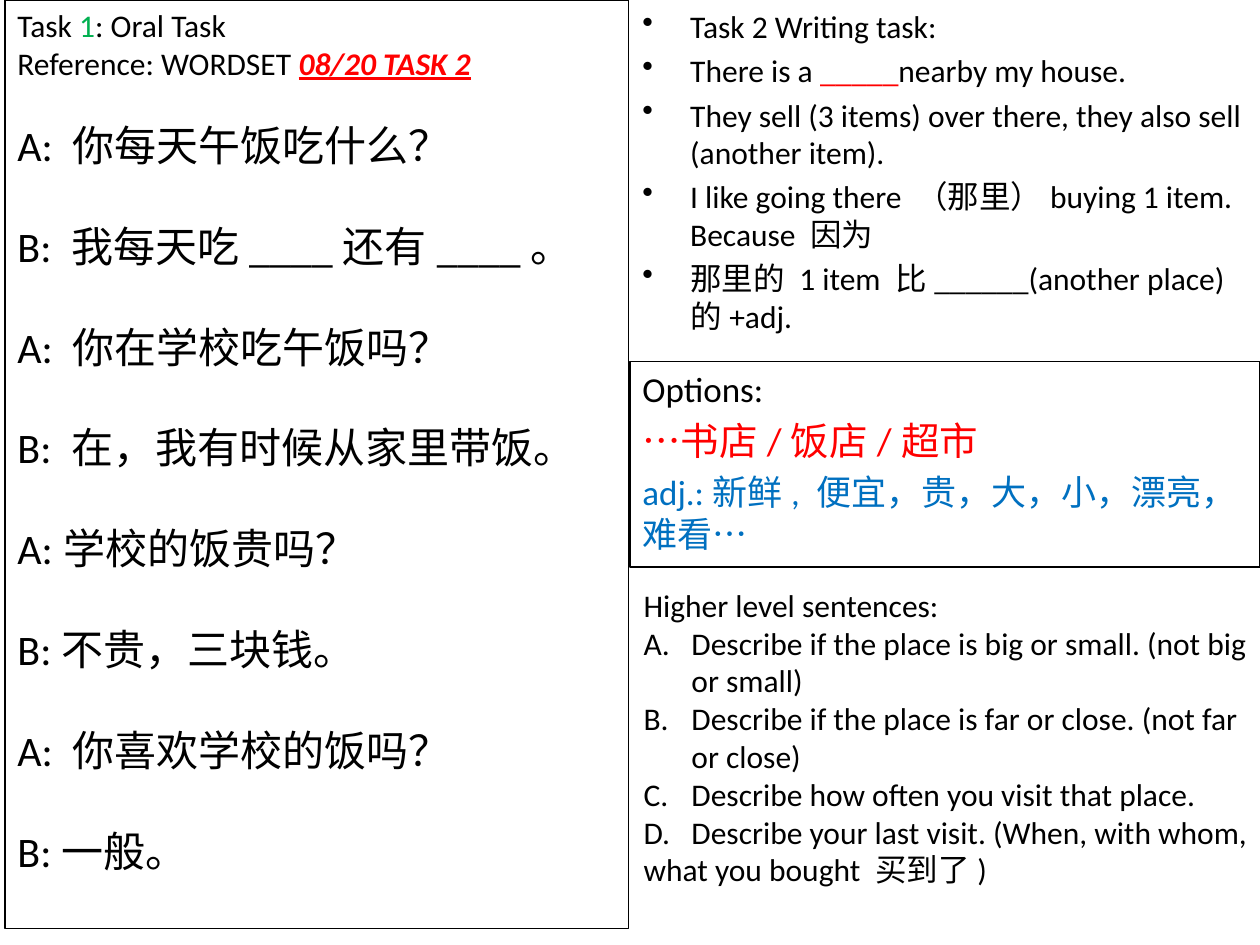
from lxml import etree
from pptx import Presentation
from pptx import util as u
from pptx.dml.color import RGBColor
from pptx.enum import shapes, text
from pptx.oxml import ns

BLACK, RED, GREEN, BLUE = "000000", "FF0000", "00B050", "0070C0"
HANGING = 0.38


def color(value):
    """Turn a hex string into a colour."""
    return RGBColor.from_string(value)


class Worksheet:
    """Holds the text style and the current slide."""

    font = "Calibri"

    def __init__(self, slide):
        self.slide = slide

    def panel(self, left, top, width, height):
        """Add an outlined rectangle and return its text frame."""
        shape = self.slide.shapes.add_shape(
            shapes.MSO_SHAPE.RECTANGLE, *map(u.Inches, (left, top, width, height)))
        shape.shadow.inherit = False
        shape.fill.background()
        shape.line.color.rgb = color(BLACK)
        shape.line.width = u.Pt(0.75)
        return self.prepare(shape)

    def text_box(self, left, top, width, height):
        """Add a plain text box and return its text frame."""
        return self.prepare(self.slide.shapes.add_textbox(
            *map(u.Inches, (left, top, width, height))))

    def prepare(self, shape):
        """Make a text frame wrap and start at the top."""
        frame = shape.text_frame
        frame.word_wrap = True
        frame.vertical_anchor = text.MSO_ANCHOR.TOP
        return frame

    def paragraph(self, frame, parts, size=18, before=0, ink=BLACK):
        """Add a paragraph of plain strings or (string, colour, emphasis) parts."""
        first = frame.paragraphs[0]
        paragraph = frame.add_paragraph() if first.runs else first
        paragraph.alignment = text.PP_ALIGN.LEFT
        paragraph.space_before = u.Pt(before)
        for part in [parts] if isinstance(parts, str) else parts:
            wording, tint, emphasis = (part, ink, False) if isinstance(part, str) else part
            run = paragraph.add_run()
            run.text = wording
            run.font.name = self.font
            run.font.size = u.Pt(size)
            run.font.color.rgb = color(tint)
            if emphasis:
                run.font.bold = run.font.italic = run.font.underline = True
        return paragraph

    def list_item(self, frame, parts, tag, before=0, **marker):
        """Add a paragraph with a hanging bullet or number."""
        properties = self.paragraph(frame, parts, before=before)._p.get_or_add_pPr()
        properties.set("marL", str(u.Inches(HANGING)))
        properties.set("indent", str(-u.Inches(HANGING)))
        etree.SubElement(properties, ns.qn(tag), **marker)

    def tabbed_item(self, frame, wording):
        """Add a typed letter followed by a tab."""
        properties = self.paragraph(frame, wording)._p.get_or_add_pPr()
        tabs = etree.SubElement(properties, ns.qn("a:tabLst"))
        etree.SubElement(tabs, ns.qn("a:tab"), pos=str(u.Inches(HANGING)), algn="l")


def main():
    """Build the worksheet slide."""
    presentation = Presentation()
    presentation.slide_width, presentation.slide_height = u.Inches(10), u.Inches(7.5)
    sheet = Worksheet(presentation.slides.add_slide(presentation.slide_layouts[6]))

    oral = sheet.panel(0.04, 0, 4.95, 7.37)
    sheet.paragraph(oral, ["Task ", ("1", GREEN, False), ": Oral Task"])
    sheet.paragraph(oral, ["Reference: WORDSET ", ("08/20 TASK 2", RED, True)])
    dialogue = [
        "A: 你每天午饭吃什么？",
        "B: 我每天吃____还有____。",
        "A: 你在学校吃午饭吗？",
        "B: 在，我有时候从家里带饭。",
        "A:学校的饭贵吗？",
        "B:不贵，三块钱。",
        "A: 你喜欢学校的饭吗？",
        "B:一般。",
    ]
    for number, line in enumerate(dialogue):
        sheet.paragraph(oral, line, size=24, before=28.8 if number else 21.6)

    writing = sheet.text_box(5, 0.01, 5, 1.83)
    for parts in [
        "Task 2 Writing task:",
        ["There is a ", ("_____", RED, False), "nearby my house."],
        "They sell (3 items) over there, they also sell (another item).",
        "I like going there （那里）buying 1 item. Because 因为",
        "那里的 1 item 比______(another place) 的+adj.",
    ]:
        sheet.list_item(writing, parts, "a:buChar", before=3.6, char="•")

    options = sheet.panel(5, 2.87, 5, 1.63)
    for wording, size, ink in [
        ("Options:", 20, BLACK),
        ("…书店/饭店/超市", 22, RED),
        ("adj.:新鲜, 便宜，贵，大，小，漂亮，难看…", 20, BLUE),
    ]:
        sheet.paragraph(options, wording, size=size, before=size / 5, ink=ink)

    higher = sheet.text_box(5.01, 4.6, 5, 3.06)
    sheet.paragraph(higher, "Higher level sentences:")
    for wording in [
        "Describe if the place is big or small. (not big or small)",
        "Describe if the place is far or close. (not far or close)",
    ]:
        sheet.list_item(higher, wording, "a:buAutoNum", type="alphaUcPeriod")
    for wording in [
        "C.\tDescribe how often you visit that place.",
        "D.\tDescribe your last visit. (When, with whom, what you bought 买到了)",
    ]:
        sheet.tabbed_item(higher, wording)

    presentation.save("out.pptx")


if __name__ == "__main__":
    main()
